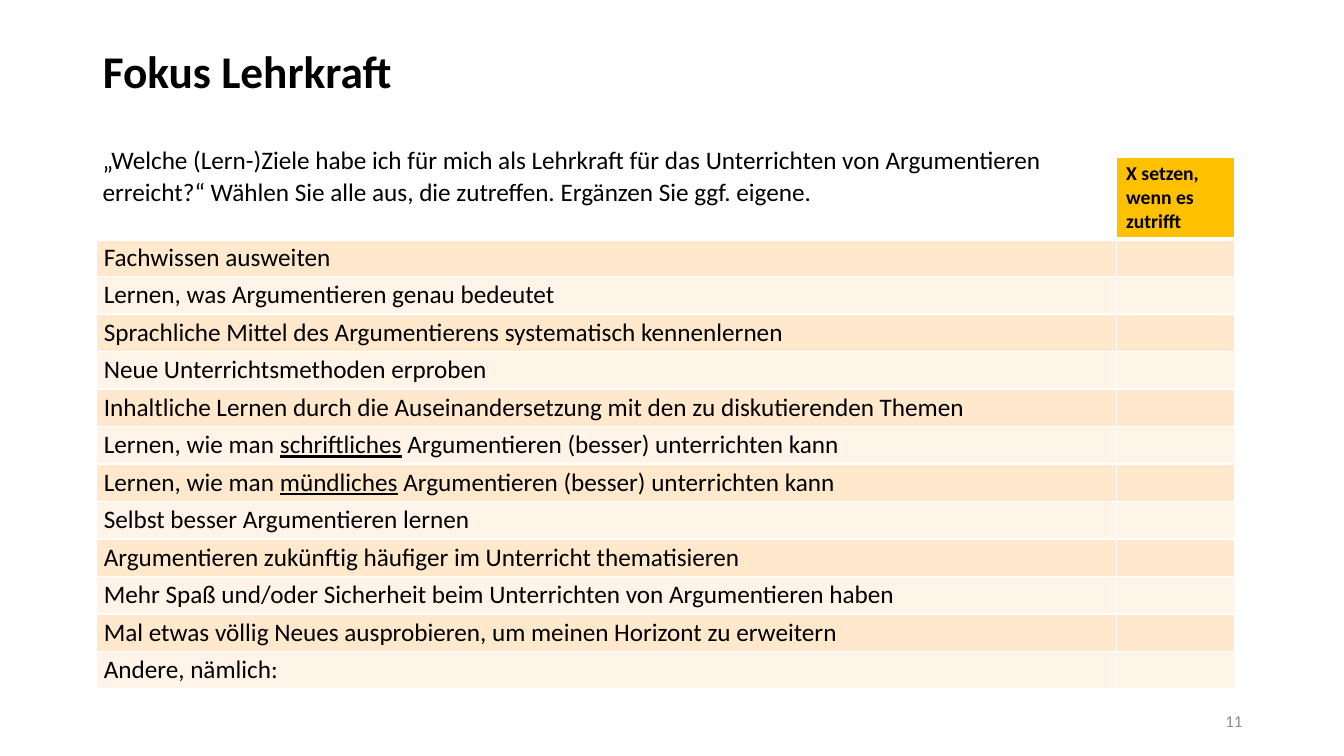
from lxml.etree import SubElement
from pptx import Presentation
from pptx.dml.color import RGBColor
from pptx.enum.text import MSO_ANCHOR as Anchor, MSO_AUTO_SIZE as AutoSize, PP_ALIGN as Align
from pptx.oxml.ns import qn
from pptx.util import Inches, Pt

COLORS = {"text": "000000", "number": "8C8C8C", "paper": "FFFFFF",
          "header": "FFC000", "odd": "FFE8CC", "even": "FFF4E7"}
GOALS = [
    "Fachwissen ausweiten",
    "Lernen, was Argumentieren genau bedeutet",
    "Sprachliche Mittel des Argumentierens systematisch kennenlernen",
    "Neue Unterrichtsmethoden erproben",
    "Inhaltliche Lernen durch die Auseinandersetzung mit den zu diskutierenden Themen",
    "Lernen, wie man _schriftliches_ Argumentieren (besser) unterrichten kann",
    "Lernen, wie man _mündliches_ Argumentieren (besser) unterrichten kann",
    "Selbst besser Argumentieren lernen",
    "Argumentieren zukünftig häufiger im Unterricht thematisieren",
    "Mehr Spaß und/oder Sicherheit beim Unterrichten von Argumentieren haben",
    "Mal etwas völlig Neues ausprobieren, um meinen Horizont zu erweitern",
    "Andere, nämlich:",
]


def write(frame, text, size=18, color="text", bold=False, align=Align.LEFT):
    """Fill a text frame; words between underscores are underlined."""
    para = frame.paragraphs[0]
    para.alignment = align
    para.font.size = Pt(size)
    for index, part in enumerate(text.split("_") if text else []):
        span = para.add_run()
        span.text = part
        span.font.name = "Calibri"
        span.font.size = Pt(size)
        span.font.bold = bold
        span.font.underline = index % 2 == 1
        span.font.color.rgb = RGBColor.from_string(COLORS[color])
    return para


def style_cell(cell, fill, bottom=1):
    """Give a cell white borders and a plain fill."""
    props = cell._tc.get_or_add_tcPr()
    for side, width in (("L", 1), ("R", 1), ("T", 1), ("B", bottom)):
        line = SubElement(props, qn(f"a:ln{side}"), w=str(Pt(width)))
        solid = SubElement(line, qn("a:solidFill"))
        SubElement(solid, qn("a:srgbClr"), val=COLORS["paper"])
    cell.fill.solid()
    cell.fill.fore_color.rgb = RGBColor.from_string(COLORS[fill])


deck = Presentation()
deck.slide_width, deck.slide_height = Inches(13.33), Inches(7.5)
page = deck.slides.add_slide(deck.slide_layouts[5])

# Title
title = page.shapes.title
title.left, title.top = Inches(0.92), Inches(0.4)
title.width, title.height = Inches(11.5), Inches(0.59)
title.text_frame.auto_size = AutoSize.NONE
title.text_frame.vertical_anchor = Anchor.MIDDLE
write(title.text_frame, "Fokus Lehrkraft", size=32.4, bold=True)

# Table of goals with a column to tick
table = page.shapes.add_table(len(GOALS) + 1, 2, Inches(0.96), Inches(1.56),
                              Inches(11.29), Inches(5.2)).table
for column, width in zip(table.columns, (10.11, 1.18)):
    column.width = Inches(width)
for row in table.rows:
    row.height = Inches(0.35)
table.rows[0].height = Inches(0.79)

style_cell(table.cell(0, 0), "paper", bottom=3)
style_cell(table.cell(0, 1), "header", bottom=3)
write(table.cell(0, 1).text_frame, "X setzen, wenn es zutrifft", size=14, bold=True)

for number, goal in enumerate(GOALS, start=1):
    goal_cell, tick_cell = table.cell(number, 0), table.cell(number, 1)
    for cell in (goal_cell, tick_cell):
        style_cell(cell, "odd" if number % 2 else "even")
    goal_cell.margin_left = goal_cell.margin_right = Inches(0.07)
    goal_cell.margin_top = goal_cell.margin_bottom = 0
    goal_cell.vertical_anchor = Anchor.MIDDLE
    write(goal_cell.text_frame, goal)
    write(tick_cell.text_frame, "", size=16)

# Question above the table
question = page.shapes.add_textbox(Inches(0.92), Inches(1.36), Inches(10.12), Inches(0.73))
question.text_frame.word_wrap = True
question.text_frame.auto_size = AutoSize.SHAPE_TO_FIT_TEXT
para = write(question.text_frame,
             "„Welche (Lern-)Ziele habe ich für mich als Lehrkraft für das Unterrichten von "
             "Argumentieren erreicht?“ Wählen Sie alle aus, die zutreffen. Ergänzen Sie ggf. eigene.")
para.line_spacing = 1.07
para.space_after = Pt(8)

# Page number
footer = page.shapes.add_textbox(Inches(9.42), Inches(6.95), Inches(3), Inches(0.4))
footer.text_frame.word_wrap = True
footer.text_frame.vertical_anchor = Anchor.MIDDLE
write(footer.text_frame, "11", size=12, color="number", align=Align.RIGHT)

deck.save("out.pptx")
